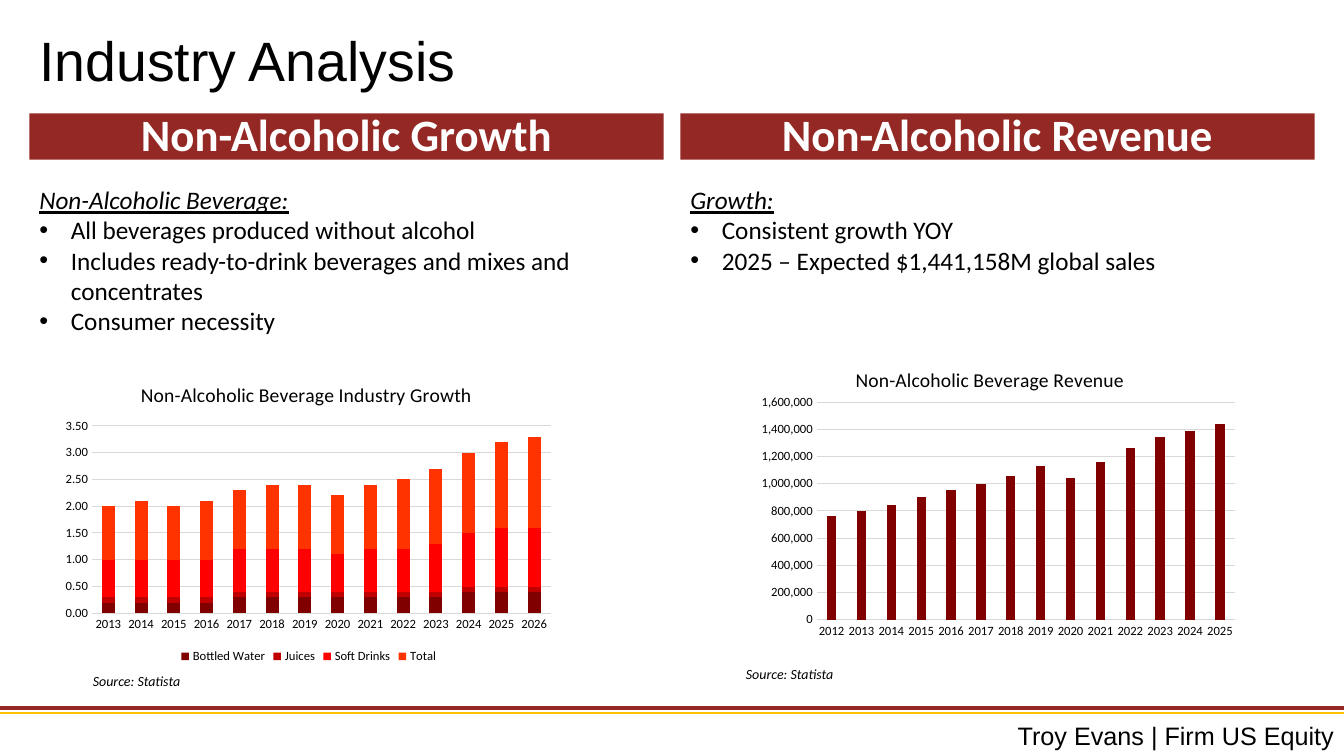
from lxml.etree import SubElement
from pptx import Presentation
from pptx.chart.data import CategoryChartData
from pptx.dml.color import RGBColor
from pptx.enum.chart import XL_CHART_TYPE as ChartType
from pptx.enum.chart import XL_LEGEND_POSITION as LegendPosition
from pptx.enum.chart import XL_TICK_MARK as TickMark
from pptx.enum.shapes import MSO_CONNECTOR as Connector
from pptx.enum.shapes import MSO_SHAPE as Shape
from pptx.enum.text import MSO_ANCHOR as Anchor
from pptx.enum.text import MSO_AUTO_SIZE as AutoSize
from pptx.enum.text import PP_ALIGN as Align
from pptx.oxml.ns import qn
from pptx.oxml.xmlchemy import OxmlElement
from pptx.util import Emu, Pt

SLIDE_W, SLIDE_H = 1280, 720
MARGIN, COLUMN_W, COLUMN_STEP = 28, 604, 620
CHART_W, CHART_H = 480, 288
BLACK, WHITE, CRIMSON, GOLD, GREY = "000000", "FFFFFF", "942825", "FFC000", "D9D9D9"

COLUMNS = [
    {
        "heading": "Non-Alcoholic Growth",
        "topic": "Non-Alcoholic Beverage:",
        "points": [
            "All beverages produced without alcohol",
            "Includes ready-to-drink beverages and mixes and concentrates",
            "Consumer necessity",
        ],
        "points_h": 156,
        "source_at": (79, 636),
        "chart_at": (54, 348),
        "chart": {
            "kind": ChartType.COLUMN_STACKED,
            "title": "Non-Alcoholic Beverage Industry Growth",
            "title_at": (0.16, 0.04),
            "plot_box": (0.07, 0.2, 0.91, 0.62),
            "first_year": 2013,
            "series": [
                ("Bottled Water", "800000",
                 [0.2, 0.2, 0.2, 0.2, 0.3, 0.3, 0.3, 0.3, 0.3, 0.3, 0.3, 0.4, 0.4, 0.4]),
                ("Juices", "C00000", [0.1] * 14),
                ("Soft Drinks", "FF0000",
                 [0.7, 0.7, 0.7, 0.7, 0.8, 0.8, 0.8, 0.7, 0.8, 0.8, 0.9, 1, 1.1, 1.1]),
                ("Total", "FF3300",
                 [1, 1.1, 1, 1.1, 1.1, 1.2, 1.2, 1.1, 1.2, 1.3, 1.4, 1.5, 1.6, 1.7]),
            ],
            "bars": {"gap_width": 150, "overlap": 100},
            "scale": {"minimum_scale": 0, "maximum_scale": 3.5, "major_unit": 0.5},
            "number_format": "0.00",
            "legend": True,
        },
    },
    {
        "heading": "Non-Alcoholic Revenue",
        "topic": "Growth:",
        "points": ["Consistent growth YOY", "2025 – Expected $1,441,158M global sales"],
        "points_h": 97,
        "source_at": (701, 629),
        "chart_at": (701, 334),
        "chart": {
            "kind": ChartType.COLUMN_CLUSTERED,
            "title": "Non-Alcoholic Beverage Revenue",
            "title_at": (0.23, 0.04),
            "plot_box": (0.16, 0.17, 0.83, 0.72),
            "first_year": 2012,
            "series": [
                ("Series 1", "800000",
                 [760000, 800000, 840000, 900000, 950000, 1000000, 1060000,
                  1130000, 1040000, 1160000, 1260000, 1340000, 1390000, 1440000]),
            ],
            "bars": {"gap_width": 219, "overlap": -27},
            "scale": {"minimum_scale": 0, "maximum_scale": 1600000, "major_unit": 200000},
            "number_format": "#,##0",
            "legend": False,
        },
    },
]


def px(length):
    return Emu(length * 9525)


def rgb(value):
    return RGBColor.from_string(value)


def set_all(target, values):
    for name, value in values.items():
        setattr(target, name, value)


def style_font(font, size, color=BLACK, name="Calibri", **values):
    set_all(font, {"size": Pt(size), "name": name, **values})
    font.color.rgb = rgb(color)


def add_text(slide, box, text, font, **paragraph_values):
    """Add a wrapping text box and return its text frame."""
    frame = slide.shapes.add_textbox(*map(px, box)).text_frame
    frame.word_wrap = True
    write(frame.paragraphs[0], text, font, **paragraph_values)
    return frame


def write(paragraph, text, font, **paragraph_values):
    set_all(paragraph, paragraph_values)
    run = paragraph.add_run()
    run.text = text
    style_font(run.font, **font)


def add_bullet(paragraph):
    properties = paragraph._p.get_or_add_pPr()
    properties.set("marL", str(px(30)))
    properties.set("indent", str(-px(30)))
    SubElement(properties, qn("a:buFont")).set("typeface", "Arial")
    SubElement(properties, qn("a:buChar")).set("char", "•")


def add_rule(slide, y, color, width):
    rule = slide.shapes.add_connector(Connector.STRAIGHT, 0, px(y), px(SLIDE_W), px(y))
    rule.line.color.rgb = rgb(color)
    rule.line.width = Pt(width)
    SubElement(rule._element.spPr, qn("a:effectLst"))


def add_heading(slide, box, text):
    bar = slide.shapes.add_shape(Shape.RECTANGLE, *map(px, box))
    bar.shadow.inherit = False
    bar.fill.solid()
    bar.fill.fore_color.rgb = rgb(CRIMSON)
    bar.line.fill.background()
    bar.text_frame.vertical_anchor = Anchor.MIDDLE
    write(bar.text_frame.paragraphs[0], text, {"size": 32, "color": WHITE, "bold": True},
          alignment=Align.CENTER, line_spacing=0.9)


def add_points(slide, box, topic, points):
    frame = add_text(slide, box, topic, {"size": 18, "italic": True, "underline": True})
    frame.auto_size = AutoSize.SHAPE_TO_FIT_TEXT
    for point in points:
        paragraph = frame.add_paragraph()
        add_bullet(paragraph)
        write(paragraph, point, {"size": 18})


def set_layout(parent, index, **settings):
    """Fix the place of a chart part, in fractions of the chart."""
    for old in parent.findall(qn("c:layout")):
        parent.remove(old)
    layout = OxmlElement("c:layout")
    manual = SubElement(layout, qn("c:manualLayout"))
    for tag, value in settings.items():
        SubElement(manual, qn(f"c:{tag}")).set("val", str(value))
    parent.insert(index, layout)


def add_column_chart(slide, box, content):
    data = CategoryChartData()
    first, series = content["first_year"], content["series"]
    data.categories = [str(first + i) for i in range(len(series[0][2]))]
    for name, _, values in series:
        data.add_series(name, values)
    chart = slide.shapes.add_chart(content["kind"], *map(px, box), data).chart
    style_font(chart.font, 10)

    # Title and plot area
    title = chart.chart_title
    write(title.text_frame.paragraphs[0], content["title"], {"size": 14, "bold": False})
    x, y = content["title_at"]
    set_layout(title.element, 1, xMode="edge", yMode="edge", x=x, y=y)
    x, y, w, h = content["plot_box"]
    set_layout(chart.element.find(".//" + qn("c:plotArea")), 0, layoutTarget="inner",
               xMode="edge", yMode="edge", x=x, y=y, w=w, h=h)

    # Bars
    plot = chart.plots[0]
    set_all(plot, {"vary_by_categories": False, **content["bars"]})
    for bars, (_, color, _) in zip(plot.series, series):
        bars.format.fill.solid()
        bars.format.fill.fore_color.rgb = rgb(color)

    # Axes
    years, amounts = chart.category_axis, chart.value_axis
    for axis in (years, amounts):
        set_all(axis, {"major_tick_mark": TickMark.NONE, "minor_tick_mark": TickMark.NONE})
        style_font(axis.tick_labels.font, 9)
    set_all(amounts, {"has_major_gridlines": True, **content["scale"]})
    set_all(amounts.tick_labels, {"number_format": content["number_format"],
                                  "number_format_is_linked": False})
    amounts.format.line.fill.background()
    for line in (years.format.line, amounts.major_gridlines.format.line):
        line.color.rgb = rgb(GREY)
        line.width = Pt(0.75)

    # Legend
    chart.has_legend = content["legend"]
    if chart.has_legend:
        set_all(chart.legend, {"position": LegendPosition.BOTTOM, "include_in_layout": False})
        style_font(chart.legend.font, 9)


def add_column(slide, left, column):
    add_heading(slide, (left, 108, COLUMN_W, 44), column["heading"])
    add_points(slide, (left, 171, COLUMN_W, column["points_h"]),
               column["topic"], column["points"])
    add_column_chart(slide, (*column["chart_at"], CHART_W, CHART_H), column["chart"])
    source = add_text(slide, (*column["source_at"], 147, 26), "Source: Statista",
                      {"size": 10, "italic": True})
    source.auto_size = AutoSize.SHAPE_TO_FIT_TEXT


def add_frame(slide):
    """Add the slide title, the two rules and the footer."""
    add_rule(slide, 674, CRIMSON, 3)
    add_rule(slide, 679, GOLD, 1.5)
    title = add_text(slide, (MARGIN, 31, 1224, 60), "Industry Analysis",
                     {"size": 39.6, "name": "Arial"}, line_spacing=0.9)
    footer = add_text(slide, (60, 684, 1220, 36), "Troy Evans | Firm US Equity",
                      {"size": 18, "name": "Arial"}, line_spacing=0.9, alignment=Align.RIGHT)
    for frame in (title, footer):
        frame.vertical_anchor = Anchor.MIDDLE


def main():
    deck = Presentation()
    set_all(deck, {"slide_width": px(SLIDE_W), "slide_height": px(SLIDE_H)})
    slide = deck.slides.add_slide(deck.slide_layouts[6])
    add_frame(slide)
    for i, column in enumerate(COLUMNS):
        add_column(slide, MARGIN + i * COLUMN_STEP, column)
    deck.save("out.pptx")


if __name__ == "__main__":
    main()
